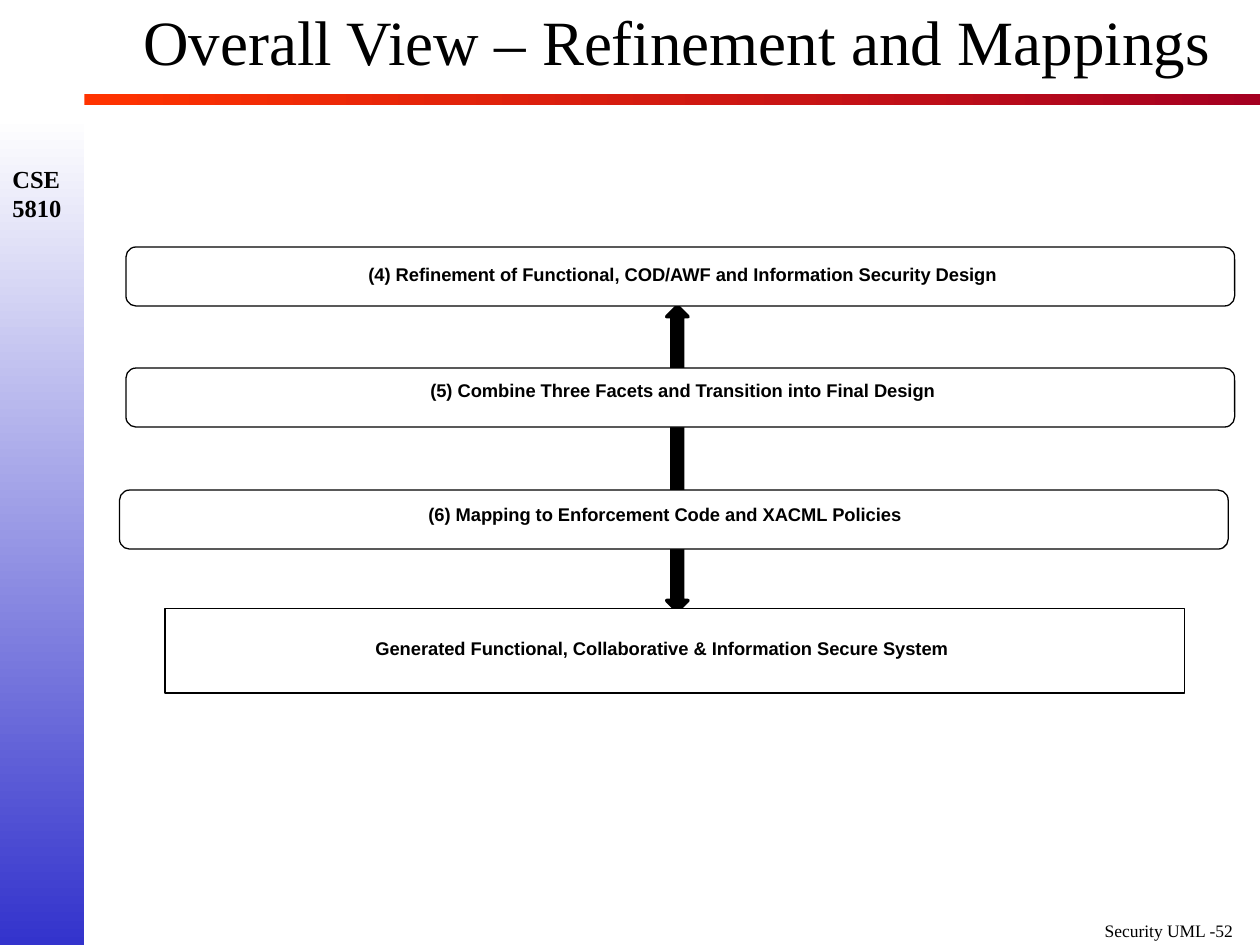
from pptx import Presentation
from pptx.dml.color import RGBColor
from pptx.enum.shapes import MSO_SHAPE as Shape
from pptx.enum.text import MSO_ANCHOR as Anchor, MSO_AUTO_SIZE as AutoSize, PP_ALIGN as Align
from pptx.util import Cm, Pt

BLACK = RGBColor(0x00, 0x00, 0x00)
WHITE = RGBColor(0xFF, 0xFF, 0xFF)
BLUE = RGBColor(0x33, 0x33, 0xCC)
ORANGE = RGBColor(0xFF, 0x33, 0x00)
CRIMSON = RGBColor(0xA5, 0x00, 0x21)

SERIF = {"name": "Times New Roman", "bold": False}
TITLE = {**SERIF, "size": Pt(36)}
FOOTER = {**SERIF, "size": Pt(10)}
COURSE = {**SERIF, "size": Pt(14), "bold": True}
LABEL = {"name": "Arial", "size": Pt(10.5), "bold": True}

deck = Presentation()
deck.slide_width, deck.slide_height = Cm(25.4), Cm(19.05)
page = deck.slides.add_slide(deck.slide_layouts[5])


def write(box, lines, style, align):
    frame = box.text_frame
    frame.word_wrap = True
    frame.auto_size = AutoSize.NONE
    frame.text = "\n".join(lines)
    for para in frame.paragraphs:
        para.alignment = align
        for span in para.runs:
            span.font.color.rgb = BLACK
            for key, value in style.items():
                setattr(span.font, key, value)


def draw(kind, place, color, line_width):
    shape = page.shapes.add_shape(kind, *map(Cm, place))
    shape.shadow.inherit = False
    shape.fill.solid()
    shape.fill.fore_color.rgb = color
    shape.line.color.rgb = BLACK
    shape.line.width = Pt(line_width)
    return shape


bands = [
    ((0, 2.34, 1.7, 16.71), 270, (WHITE, BLUE)),
    ((1.7, 1.9, 23.7, 0.21), 0, (ORANGE, CRIMSON)),
]
for place, angle, colors in bands:
    band = page.shapes.add_shape(Shape.RECTANGLE, *map(Cm, place))
    band.shadow.inherit = False
    band.line.fill.background()
    band.fill.gradient()
    band.fill.gradient_angle = angle
    for stop, color in zip(band.fill.gradient_stops, colors):
        stop.color.rgb = color

title = page.shapes.title
title.left, title.top, title.width, title.height = map(Cm, (1.8, 0, 23.7, 1.9))
write(title, ["Overall View – Refinement and Mappings"], TITLE, Align.CENTER)
title.text_frame.vertical_anchor = Anchor.MIDDLE
title.text_frame.paragraphs[0].line_spacing = 0.8

draw(Shape.UP_DOWN_ARROW, (13.44, 6.17, 0.43, 6.15), BLACK, 2)
draw(Shape.RECTANGLE, (3.33, 12.27, 20.55, 1.7), WHITE, 0.75)

for left, top in [(2.54, 4.98), (2.54, 7.42), (2.41, 9.88)]:
    step = draw(Shape.ROUNDED_RECTANGLE, (left, top, 22.35, 1.19), WHITE, 0.75)
    step.adjustments[0] = 0.17

texts = [
    ((22.02, 18.42, 3.38, 0.66), ["Security UML -52"], FOOTER, Align.LEFT),
    ((0, 3.18, 1.7, 1.45), ["CSE", "5810"], COURSE, Align.LEFT),
    ((2.72, 5.18, 22.1, 0.71),
     ["(4) Refinement of Functional, COD/AWF and Information Security Design"], LABEL, Align.CENTER),
    ((2.72, 7.52, 22.1, 0.71),
     ["(5) Combine Three Facets and Transition into Final Design"], LABEL, Align.CENTER),
    ((2.36, 10.01, 22.1, 0.71),
     ["(6) Mapping to Enforcement Code and XACML Policies"], LABEL, Align.CENTER),
    ((3.33, 12.73, 20.04, 0.71),
     ["Generated Functional, Collaborative & Information Secure System"], LABEL, Align.CENTER),
]
for place, lines, style, align in texts:
    write(page.shapes.add_textbox(*map(Cm, place)), lines, style, align)

deck.save("out.pptx")
